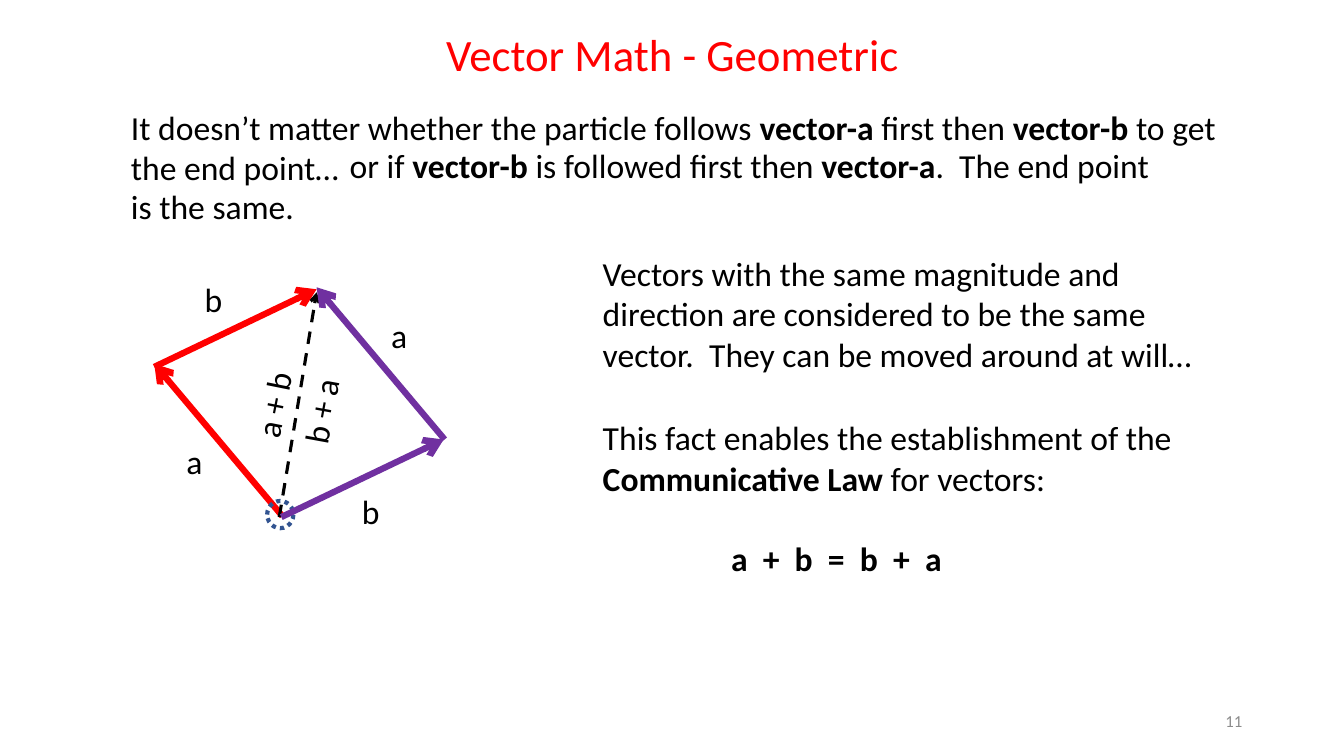
import dataclasses

import lxml.etree
import pptx
import pptx.dml.color
import pptx.enum.dml
import pptx.enum.shapes
import pptx.enum.text
import pptx.oxml.ns
import pptx.util

PX = 9144
ALIGN = pptx.enum.text.PP_ALIGN
ANCHOR = pptx.enum.text.MSO_ANCHOR
DASH = pptx.enum.dml.MSO_LINE


@dataclasses.dataclass(frozen=True)
class Theme:
    """Colours, font and type sizes of the slide."""
    font: str = "Calibri"
    ink: str = "000000"
    red: str = "FF0000"
    purple: str = "7030A0"
    blue: str = "325491"
    grey: str = "8C8C8C"
    title: int = 32
    body: int = 24
    small: int = 12


THEME = Theme()


def rgb(colour):
    """Turn a hex string into a colour."""
    return pptx.dml.color.RGBColor.from_string(colour)


def apply(target, values):
    """Set each attribute named in a dict of format values."""
    for name, value in values.items():
        setattr(target, name, value)


def write_text(page, box, spans, size=THEME.body, colour=THEME.ink,
               align=ALIGN.LEFT, anchor=ANCHOR.TOP, indent=0, turn=0):
    """Place one paragraph of (words, bold) spans in a box."""
    holder = page.shapes.add_textbox(*(PX * length for length in box))
    holder.rotation = turn
    frame = holder.text_frame
    apply(frame, {"word_wrap": True, "vertical_anchor": anchor})
    para = frame.paragraphs[0]
    para.alignment = align
    if indent:
        para._p.get_or_add_pPr().set("indent", str(PX * indent))
    for words, bold in spans:
        span = para.add_run()
        span.text = words
        apply(span.font, {"name": THEME.font, "size": pptx.util.Pt(size), "bold": bold})
        span.font.color.rgb = rgb(colour)


def style_line(line, colour, width, dash):
    """Give a line its colour, width and dash."""
    line.color.rgb = rgb(colour)
    apply(line, {"width": pptx.util.Pt(width), "dash_style": dash})


def draw_arrow(page, start, end, colour, width=4.5, dash=None):
    """Draw a straight arrow between two points."""
    arrow = page.shapes.add_connector(
        pptx.enum.shapes.MSO_CONNECTOR.STRAIGHT, *(PX * length for length in start + end))
    style_line(arrow.line, colour, width, dash)
    qn = pptx.oxml.ns.qn
    lxml.etree.SubElement(arrow.line._get_or_add_ln(), qn("a:tailEnd"), type="arrow")
    lxml.etree.SubElement(arrow._element.spPr, qn("a:effectLst"))


def draw_title(page, box):
    """Write the slide title."""
    write_text(page, box, [("Vector Math - Geometric", False)],
               THEME.title, THEME.red, ALIGN.CENTER)


def draw_statement(page, box):
    """Write the two overlapping parts of the opening statement."""
    left, top, width, height = box
    write_text(page, box, [
        ("It doesn’t matter whether the particle follows ", False), ("vector-a", True),
        (" first then ", False), ("vector-b", True), (" to get the end point…", False)])
    write_text(page, (left, top + 38, width - 107, height), [
        ("or if ", False), ("vector-b", True), (" is followed first then ", False),
        ("vector-a", True), (".  The end point is the same.", False)], indent=217)


def draw_parallelogram(page, box):
    """Draw both routes, their sum and the starting point."""
    left, top = box[:2]

    def at(x, y):
        """Move a point into the box."""
        return left + x, top + y

    def draw_route(colour, legs):
        """Draw the labelled legs of one route."""
        for name, start, end, label in legs:
            draw_arrow(page, at(*start), at(*end), colour)
            write_text(page, at(*label) + (41, 50), [(name, False)])

    draw_route(THEME.red, [("a", (160, 242), (33, 91), (55, 163)),
                           ("b", (33, 94), (194, 17), (73, 2))])
    draw_arrow(page, at(157, 243), at(194, 20), THEME.ink, 2.25, DASH.DASH)
    for words, corner, turn in [("a + b", (97, 93), 281.3), ("b + a", (144, 99), 280.3)]:
        write_text(page, at(*corner) + (113, 50), [(words, False)], turn=turn)
    origin = page.shapes.add_shape(
        pptx.enum.shapes.MSO_SHAPE.OVAL, *(PX * length for length in at(145, 227) + (26, 27)))
    origin.shadow.inherit = False
    origin.fill.background()
    style_line(origin.line, THEME.blue, 3, DASH.ROUND_DOT)
    draw_route(THEME.purple, [("a", (321, 166), (194, 15), (258, 38)),
                              ("b", (159, 243), (320, 166), (229, 212))])


def draw_law(page, box):
    """Write the explanation and the law it leads to."""
    left, top, width, height = box
    write_text(page, (left, top, 624, 131), [
        ("Vectors with the same magnitude and direction are considered to be the same "
         "vector.  They can be moved around at will…", False)])
    write_text(page, (left, top + 163, width, 91), [
        ("This fact enables the establishment of the ", False),
        ("Communicative Law", True), (" for vectors:", False)])
    write_text(page, (left + 6, top + height - 50, 471, 50),
               [("a  +  b  =  b  +  a", True)], align=ALIGN.CENTER)


def draw_page_number(page, box):
    """Write the page number."""
    write_text(page, box, [("11", False)], THEME.small, THEME.grey,
               ALIGN.RIGHT, ANCHOR.MIDDLE)


def main():
    """Build and save the deck."""
    deck = pptx.Presentation()
    apply(deck, {"slide_width": PX * 1333, "slide_height": PX * 750})
    page = deck.slides.add_slide(deck.slide_layouts[6])
    draw_title(page, (373, 22, 588, 64))
    draw_statement(page, (120, 101, 1142, 91))
    draw_parallelogram(page, (120, 270, 350, 262))
    draw_law(page, (588, 246, 673, 333))
    draw_page_number(page, (942, 695, 300, 40))
    deck.save("out.pptx")


if __name__ == "__main__":
    main()
